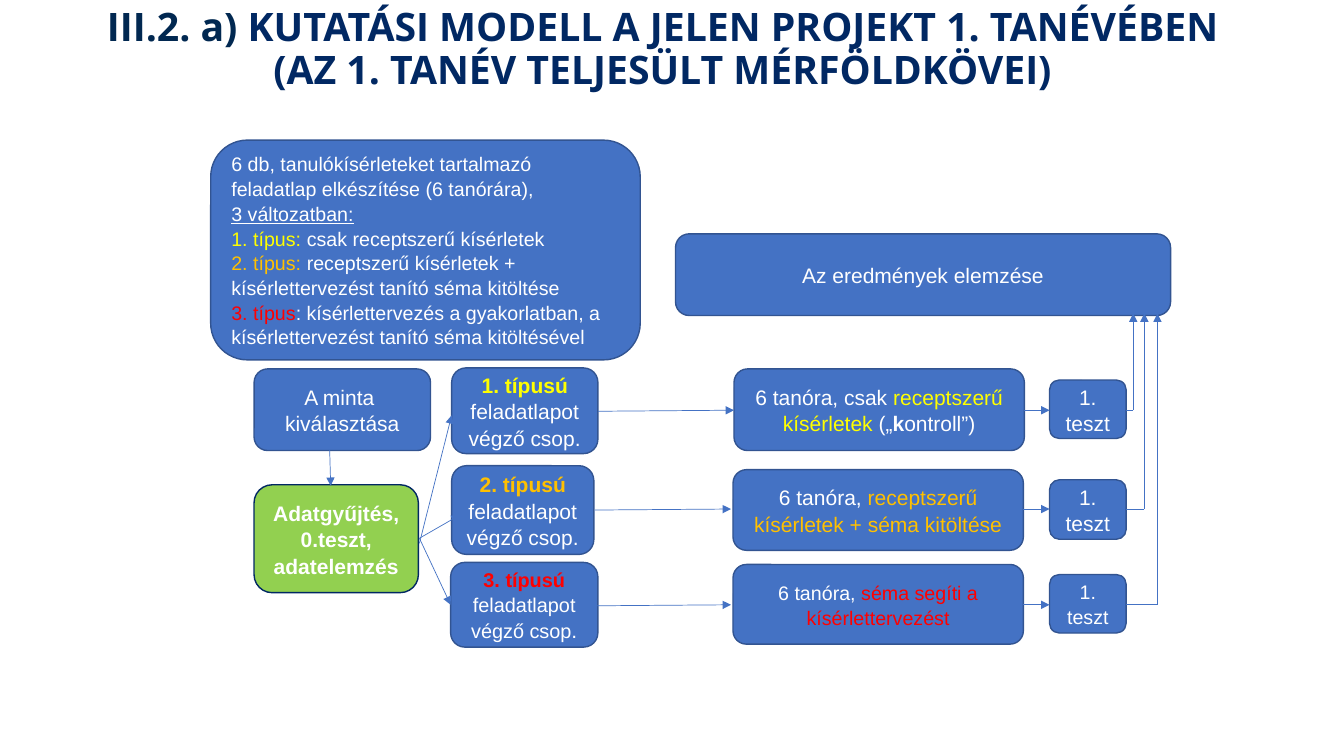
"""Build the slide showing the research model of the first school year."""
from dataclasses import dataclass
from typing import Optional

import lxml.etree
import pptx
import pptx.dml.color
import pptx.enum.shapes
import pptx.enum.text
import pptx.oxml.ns
import pptx.util

BLUE, BLUE_EDGE, GREEN, NAVY = "4472C4", "325491", "92D050", "012863"
WHITE, YELLOW, ORANGE, RED = "FFFFFF", "FFFF00", "FFC000", "FF0000"
Inches = pptx.util.Inches
CENTER = pptx.enum.text.PP_ALIGN.CENTER
LEFT = pptx.enum.text.PP_ALIGN.LEFT


@dataclass
class Span:
    text: str
    color: str = WHITE
    bold: bool = False
    underline: bool = False
    size: Optional[float] = None


@dataclass
class Box:
    left: float
    top: float
    width: float
    height: float
    paragraphs: list[list[Span]]
    size: float = 15
    fill: str = BLUE
    edge: str = BLUE_EDGE
    align: pptx.enum.text.PP_ALIGN = CENTER


@dataclass
class Link:
    start: tuple[float, float]
    end: tuple[float, float]
    arrow: bool = True


@dataclass
class Track:
    """One of the three parallel groups, from worksheet to test."""
    group: Box
    lessons: Box
    test: Box
    middle: float
    lesson_arrow: tuple[float, float]
    riser: float


def rgb(color: str) -> pptx.dml.color.RGBColor:
    return pptx.dml.color.RGBColor.from_string(color)


def write_paragraphs(text_frame, paragraphs: list[list[Span]], size: float, font: str,
                     align: pptx.enum.text.PP_ALIGN, spacing: float) -> None:
    for index, spans in enumerate(paragraphs):
        paragraph = text_frame.paragraphs[0] if index == 0 else text_frame.add_paragraph()
        paragraph.alignment = align
        paragraph.line_spacing = spacing
        for span in spans:
            run = paragraph.add_run()
            run.text = span.text
            run.font.name = font
            run.font.size = pptx.util.Pt(span.size or size)
            run.font.bold = span.bold
            run.font.underline = span.underline
            run.font.color.rgb = rgb(span.color)


def draw_title(slide) -> None:
    title = slide.shapes.title
    title.left, title.top = Inches(0.47), Inches(0.03)
    title.width, title.height = Inches(12.2), Inches(1.04)
    text_frame = title.text_frame
    text_frame.word_wrap = True
    text_frame.auto_size = pptx.enum.text.MSO_AUTO_SIZE.NONE
    text_frame.vertical_anchor = pptx.enum.text.MSO_ANCHOR.TOP
    paragraphs = [
        [Span("III.2. a) ", "012851", True),
         Span("KUTATÁSI MODELL A JELEN PROJEKT 1. TANÉVÉBEN", NAVY, True)],
        [Span("(AZ 1. TANÉV TELJESÜLT MÉRFÖLDKÖVEI)", NAVY, True)],
    ]
    write_paragraphs(text_frame, paragraphs, 28, "Open Sans", CENTER, 0.9)


def draw_box(slide, box: Box) -> None:
    shape = slide.shapes.add_shape(
        pptx.enum.shapes.MSO_SHAPE.ROUNDED_RECTANGLE,
        Inches(box.left), Inches(box.top), Inches(box.width), Inches(box.height))
    shape.shadow.inherit = False
    shape.fill.solid()
    shape.fill.fore_color.rgb = rgb(box.fill)
    shape.line.color.rgb = rgb(box.edge)
    shape.line.width = pptx.util.Pt(1)
    shape.text_frame.word_wrap = True
    shape.text_frame.vertical_anchor = pptx.enum.text.MSO_ANCHOR.MIDDLE
    write_paragraphs(shape.text_frame, box.paragraphs, box.size, "Arial", box.align, 1.05)


def draw_link(slide, link: Link) -> None:
    connector = slide.shapes.add_connector(
        pptx.enum.shapes.MSO_CONNECTOR.STRAIGHT,
        *(Inches(value) for value in (*link.start, *link.end)))
    connector.line.color.rgb = rgb(BLUE)
    connector.line.width = pptx.util.Pt(0.5)
    qualified = pptx.oxml.ns.qn
    if link.arrow:
        line = connector.line._get_or_add_ln()
        lxml.etree.SubElement(line, qualified("a:tailEnd"), type="triangle")
    lxml.etree.SubElement(connector._element.spPr, qualified("a:effectLst"))


def draw_track(slide, track: Track) -> None:
    for box in (track.group, track.lessons, track.test):
        draw_box(slide, box)
    middle = track.middle
    start, end = track.lesson_arrow
    test_right = track.test.left + track.test.width
    draw_link(slide, Link((start, middle + 0.01), (end, middle)))
    draw_link(slide, Link((track.lessons.left + track.lessons.width, middle),
                          (track.test.left, middle)))
    draw_link(slide, Link((test_right, middle), (track.riser, middle), arrow=False))
    draw_link(slide, Link((track.riser, middle), (track.riser, 3.11)))


def group_text(number: int, color: str, size: float = 15) -> list[list[Span]]:
    return [[Span(f"{number}. típusú ", color, True, size=size),
             Span("feladatlapot végző csop", size=size), Span(".")]]


TEST_TEXT = [[Span("1. teszt")]]

BOXES = [
    Box(2.09, 1.39, 4.26, 2.18, [
        [Span("6 db, tanulókísérleteket tartalmazó feladatlap elkészítése (6 tanórára),")],
        [Span("3 változatban:", underline=True)],
        [Span("1. típus: ", YELLOW), Span("csak receptszerű kísérletek")],
        [Span("2. típus: ", ORANGE),
         Span("receptszerű kísérletek + kísérlettervezést tanító séma kitöltése")],
        [Span("3. típus", RED),
         Span(": kísérlettervezés a gyakorlatban, a kísérlettervezést tanító séma kitöltésével")],
    ], size=14, align=LEFT),
    Box(2.52, 3.66, 1.75, 0.81, [[Span("A minta ")], [Span("kiválasztása")]]),
    Box(2.52, 4.81, 1.63, 1.07, [[Span("Adatgyűjtés, 0.teszt, adatelemzés", bold=True)]],
        fill=GREEN, edge=NAVY),
    Box(6.7, 2.32, 4.91, 0.81, [[Span("Az eredmények elemzése")]]),
]

TRACKS = [
    Track(Box(4.48, 3.65, 1.45, 0.85, group_text(1, YELLOW)),
          Box(7.28, 3.66, 2.88, 0.81, [[
              Span("6 tanóra, csak"), Span(" receptszerű kísérletek ", YELLOW),
              Span("(„"), Span("k", bold=True), Span("ontroll”)")]]),
          Box(10.41, 3.77, 0.76, 0.58, TEST_TEXT), 4.07, (5.93, 7.28), 11.24),
    Track(Box(4.48, 4.62, 1.41, 0.88, group_text(2, ORANGE)),
          Box(7.27, 4.66, 2.88, 0.8, [[
              Span("6 tanóra, "), Span("receptszerű kísérletek + séma kitöltése", ORANGE)]]),
          Box(10.41, 4.76, 0.76, 0.59, TEST_TEXT), 5.05, (5.9, 7.25), 11.35),
    Track(Box(4.47, 5.58, 1.46, 0.84, group_text(3, RED, 14.2)),
          Box(7.27, 5.6, 2.88, 0.79, [[
              Span("6 tanóra,"), Span(" séma segíti a kísérlettervezést", RED)]], size=14),
          Box(10.41, 5.7, 0.76, 0.58, TEST_TEXT, size=14), 6, (5.91, 7.25), 11.48),
]

LINKS = [
    Link((3.27, 4.46), (3.28, 4.82)),
    Link((4.16, 5.39), (4.48, 4.12)),
    Link((4.16, 5.34), (4.56, 5.11)),
    Link((4.16, 5.34), (4.47, 6)),
]


def main() -> None:
    presentation = pptx.Presentation()
    presentation.slide_width = Inches(13.33)
    presentation.slide_height = Inches(7.5)
    slide = presentation.slides.add_slide(presentation.slide_layouts[5])
    draw_title(slide)
    for box in BOXES:
        draw_box(slide, box)
    for track in TRACKS:
        draw_track(slide, track)
    for link in LINKS:
        draw_link(slide, link)
    presentation.save("out.pptx")


if __name__ == "__main__":
    main()
